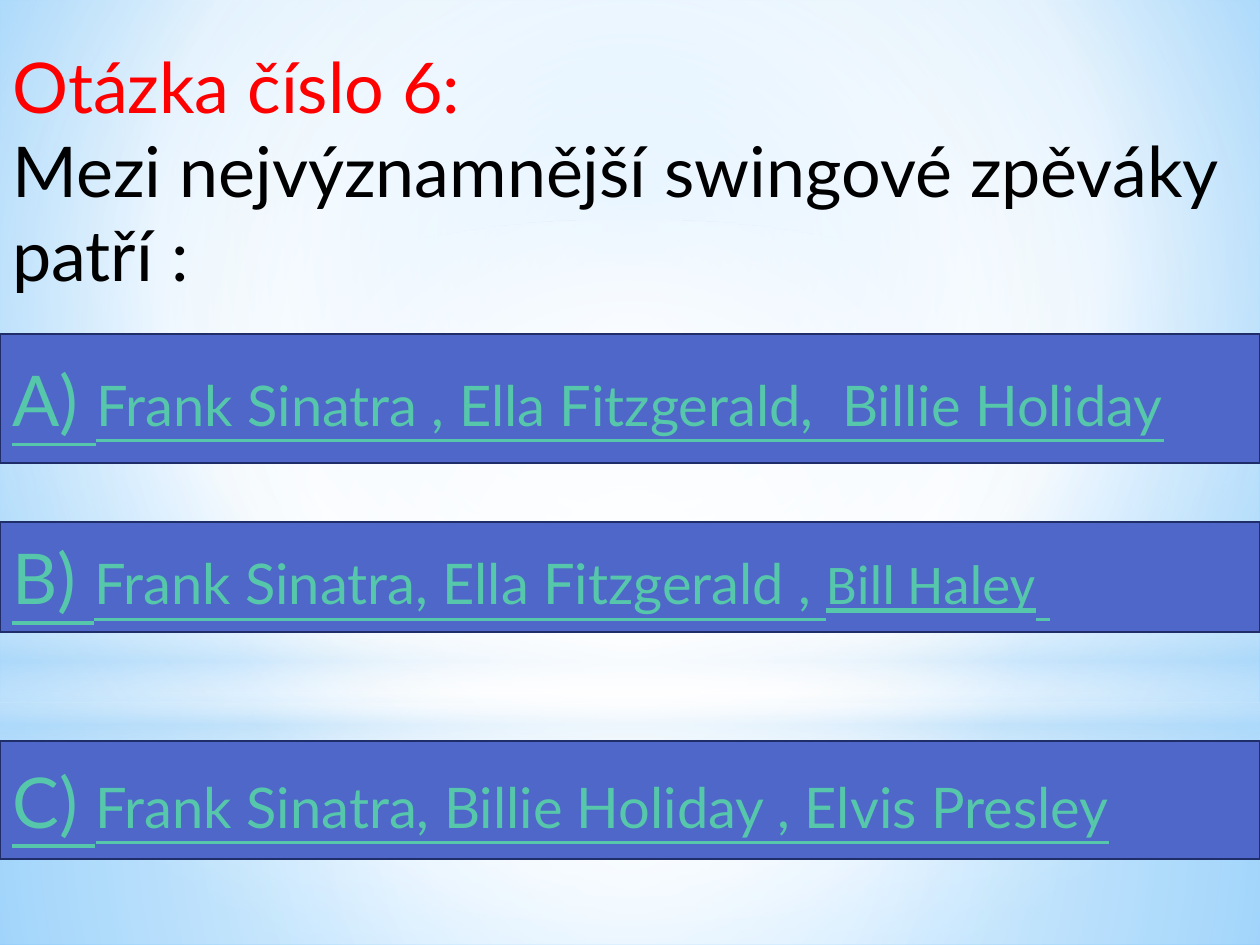
from pptx import Presentation
from pptx.dml.color import RGBColor
from pptx.enum.shapes import MSO_SHAPE as Shape
from pptx.enum.text import MSO_ANCHOR as Anchor, PP_ALIGN as Align
from pptx.oxml.ns import qn
from pptx.util import Pt
from lxml.etree import SubElement

EMU_PER_PX = 914400 / 126
WIDTH, HEIGHT = 1260, 945
FONT = "Lato"
RED, BLACK, GREEN = "FF0000", "000000", "56C7AA"
BAR_FILL, BAR_LINE = "4E67C8", "1F2E69"
WHITE, SKY = "FFFFFF", "B4DCFA"
CENTRE = (50, 50, 50, 50)


def px(length):
    return round(length * EMU_PER_PX)


def rgb(color):
    return RGBColor.from_string(color)


def set_gradient(properties, stops, focus=None):
    """Set (position, colour, opacity) stops; circular when a focus is given."""
    grad = properties.find(qn("a:gradFill"))
    for child in list(grad):
        grad.remove(child)
    grad.set("rotWithShape", "1")
    stop_list = SubElement(grad, qn("a:gsLst"))
    for position, color, opacity in stops:
        stop = SubElement(stop_list, qn("a:gs"), pos=str(position * 1000))
        clr = SubElement(stop, qn("a:srgbClr"), val=color)
        if opacity < 100:
            SubElement(clr, qn("a:alpha"), val=str(opacity * 1000))
    if focus:
        circle = SubElement(grad, qn("a:path"), {"path": "circle"})
        sides = {side: str(part * 1000) for side, part in zip("ltrb", focus)}
        SubElement(circle, qn("a:fillToRect"), sides)
    else:
        SubElement(grad, qn("a:lin"), ang="5400000", scaled="0")


class QuizSlide:
    def __init__(self, deck):
        self.page = deck.slides.add_slide(deck.slide_layouts[6])

    def backdrop(self, stops, focus):
        self.page.background.fill.gradient()
        set_gradient(self.page.element.find(".//" + qn("p:bgPr")), stops, focus)

    def shape(self, kind, top, height):
        shape = self.page.shapes.add_shape(kind, 0, px(top), px(WIDTH), px(height))
        shape.shadow.inherit = False
        return shape

    def glow(self, kind, top, height, stops, focus=None):
        glow = self.shape(kind, top, height)
        glow.line.fill.background()
        glow.fill.gradient()
        set_gradient(glow.element.spPr, stops, focus)

    def add_text(self, para, text, size, color, font=FONT, underline=None):
        for index, line in enumerate(text.split("\n")):
            if index:
                para.add_line_break()
            if line:
                span = para.add_run()
                span.text = line
                span.font.size = Pt(size)
                span.font.name = font
                span.font.color.rgb = rgb(color)
                span.font.underline = underline

    def question(self, top, height, heading, text):
        box = self.page.shapes.add_textbox(0, px(top), px(WIDTH), px(height))
        box.text_frame.word_wrap = True
        para = box.text_frame.paragraphs[0]
        para.font.size = Pt(40)
        self.add_text(para, heading + "\n", 40, RED)
        self.add_text(para, text, 40, BLACK)

    def answer(self, top, height, letter, parts):
        bar = self.shape(Shape.RECTANGLE, top, height)
        bar.fill.solid()
        bar.fill.fore_color.rgb = rgb(BAR_FILL)
        bar.line.color.rgb = rgb(BAR_LINE)
        bar.line.width = Pt(1.25)
        bar.text_frame.word_wrap = True
        bar.text_frame.vertical_anchor = Anchor.MIDDLE
        para = bar.text_frame.paragraphs[0]
        para.alignment = Align.LEFT
        self.add_text(para, letter + ") ", 40, GREEN, underline=True)
        for text, font in parts:
            self.add_text(para, text, 32, GREEN, font, True)


def main():
    deck = Presentation()
    deck.slide_width, deck.slide_height = px(WIDTH), px(HEIGHT)
    slide = QuizSlide(deck)

    # Background and soft light
    slide.backdrop([(0, "9ED5FF", 100), (60, WHITE, 100), (100, "5BB9FF", 100)],
                   (20, 10, 20, 60))
    slide.glow(Shape.RECTANGLE, 703, 242,
               [(0, WHITE, 91), (37, WHITE, 76), (100, SKY, 79)], CENTRE)
    slide.glow(Shape.RECTANGLE, 0, 703,
               [(0, WHITE, 89), (48, WHITE, 62), (100, SKY, 79)], CENTRE)
    slide.glow(Shape.RECTANGLE, 519, 315,
               [(0, WHITE, 0), (29, WHITE, 30), (45, SKY, 40),
                (55, WHITE, 26), (65, SKY, 60), (100, WHITE, 0)])
    slide.glow(Shape.OVAL, 220, 703, [(0, WHITE, 100), (56, WHITE, 0)], CENTRE)

    # Question
    slide.question(37, 267, "Otázka číslo 6:",
                   "Mezi nejvýznamnější swingové zpěváky\npatří :")

    # Answers
    slide.answer(334, 129, "A",
                 [("Frank Sinatra , Ella Fitzgerald,  Billie Holiday", FONT)])
    slide.answer(522, 110, "B",
                 [("Frank Sinatra, Ella Fitzgerald , ", FONT),
                  ("Bill Haley", "Calibri"), (" ", FONT)])
    slide.answer(741, 118, "C",
                 [("Frank Sinatra, Billie Holiday , Elvis Presley", FONT)])

    deck.save("out.pptx")


if __name__ == "__main__":
    main()
